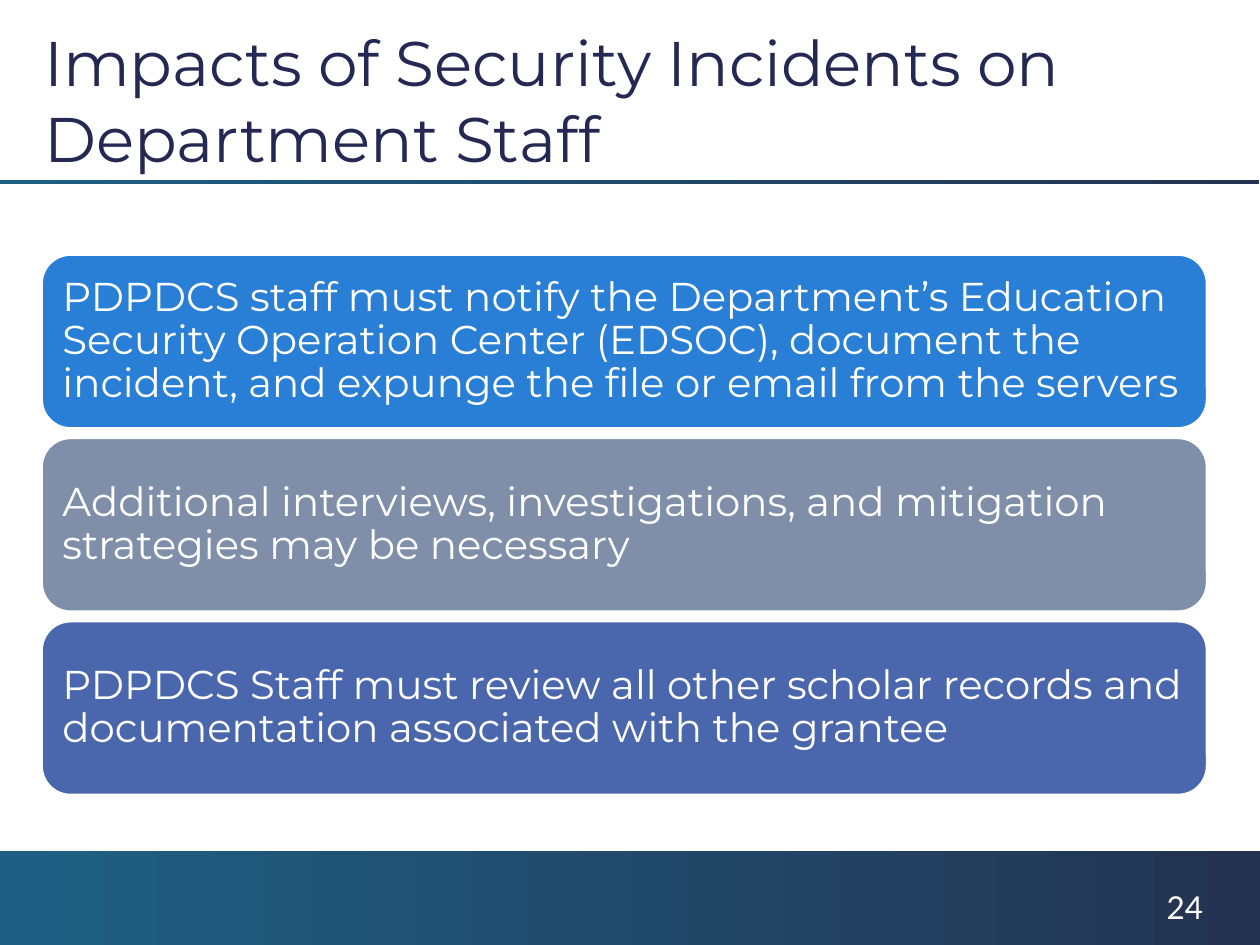
from pptx import Presentation
from pptx.dml.color import RGBColor
from pptx.enum.shapes import MSO_SHAPE
from pptx.enum.text import MSO_ANCHOR, PP_ALIGN
from pptx.util import Inches, Pt

RECT = MSO_SHAPE.RECTANGLE
ROUNDED = MSO_SHAPE.ROUNDED_RECTANGLE
MIDDLE = MSO_ANCHOR.MIDDLE
LEFT = PP_ALIGN.LEFT

WHITE = RGBColor(0xFF, 0xFF, 0xFF)
NAVY = RGBColor(0x24, 0x28, 0x52)
TEAL = RGBColor(0x1E, 0x60, 0x83)
DARK = RGBColor(0x24, 0x33, 0x52)
BLUE = RGBColor(0x29, 0x7F, 0xD5)
SLATE = RGBColor(0x7F, 0x8F, 0xA9)
INDIGO = RGBColor(0x4A, 0x66, 0xAC)

IMPACTS = [
    ("PDPDCS staff must notify the Department’s Education Security Operation "
     "Center (EDSOC), document the incident, and expunge the file or email "
     "from the servers", BLUE),
    ("Additional interviews, investigations, and mitigation strategies may be "
     "necessary", SLATE),
    ("PDPDCS Staff must review all other scholar records and documentation "
     "associated with the grantee", INDIGO),
]
CARD_TOP = 2.02
CARD_PITCH = 1.455


def write(tf, text, size, color, font="Montserrat"):
    tf.word_wrap = True
    p = tf.paragraphs[0]
    p.alignment = LEFT
    r = p.add_run()
    r.text = text
    r.font.size = Pt(size)
    r.font.name = font
    r.font.color.rgb = color
    return p


def set_title(s, text):
    title = s.shapes.title
    title.left, title.top = Inches(0.25), Inches(0.25)
    title.width, title.height = Inches(9.49), Inches(1.08)
    title.text_frame.vertical_anchor = MIDDLE
    write(title.text_frame, text, 36, NAVY)


def add_gradient_bar(s, left, top, height):
    sp = s.shapes.add_shape(RECT, Inches(left), Inches(top), Inches(10), Inches(height))
    sp.shadow.inherit = False
    sp.line.fill.background()
    sp.fill.gradient()
    sp.fill.gradient_angle = 0
    for stop, color, position in zip(sp.fill.gradient_stops, (TEAL, DARK), (0, 1)):
        stop.color.rgb = color
        stop.position = position


def add_card(s, top, text, color):
    sp = s.shapes.add_shape(ROUNDED, Inches(0.33), Inches(top), Inches(9.25), Inches(1.38))
    sp.shadow.inherit = False
    sp.fill.solid()
    sp.fill.fore_color.rgb = color
    sp.line.color.rgb = WHITE
    sp.line.width = Pt(1.5)
    tf = sp.text_frame
    tf.vertical_anchor = MIDDLE
    tf.margin_left = tf.margin_right = Inches(0.1)
    tf.margin_top = tf.margin_bottom = Inches(0.1)
    write(tf, text, 23, WHITE).line_spacing = 0.9


def add_page_number(s, number):
    box = s.shapes.add_textbox(Inches(9.16), Inches(7), Inches(0.58), Inches(0.27))
    write(box.text_frame, number, 18, WHITE, "Lato")


def main():
    prs = Presentation()
    prs.slide_width, prs.slide_height = Inches(10), Inches(7.5)
    s = prs.slides.add_slide(prs.slide_layouts[5])
    add_gradient_bar(s, 0, 6.75, 0.75)
    add_gradient_bar(s, -0.01, 1.43, 0.03)
    set_title(s, "Impacts of Security Incidents on Department Staff")
    for i, (text, color) in enumerate(IMPACTS):
        add_card(s, CARD_TOP + i * CARD_PITCH, text, color)
    add_page_number(s, "24")
    prs.save("out.pptx")


if __name__ == "__main__":
    main()
